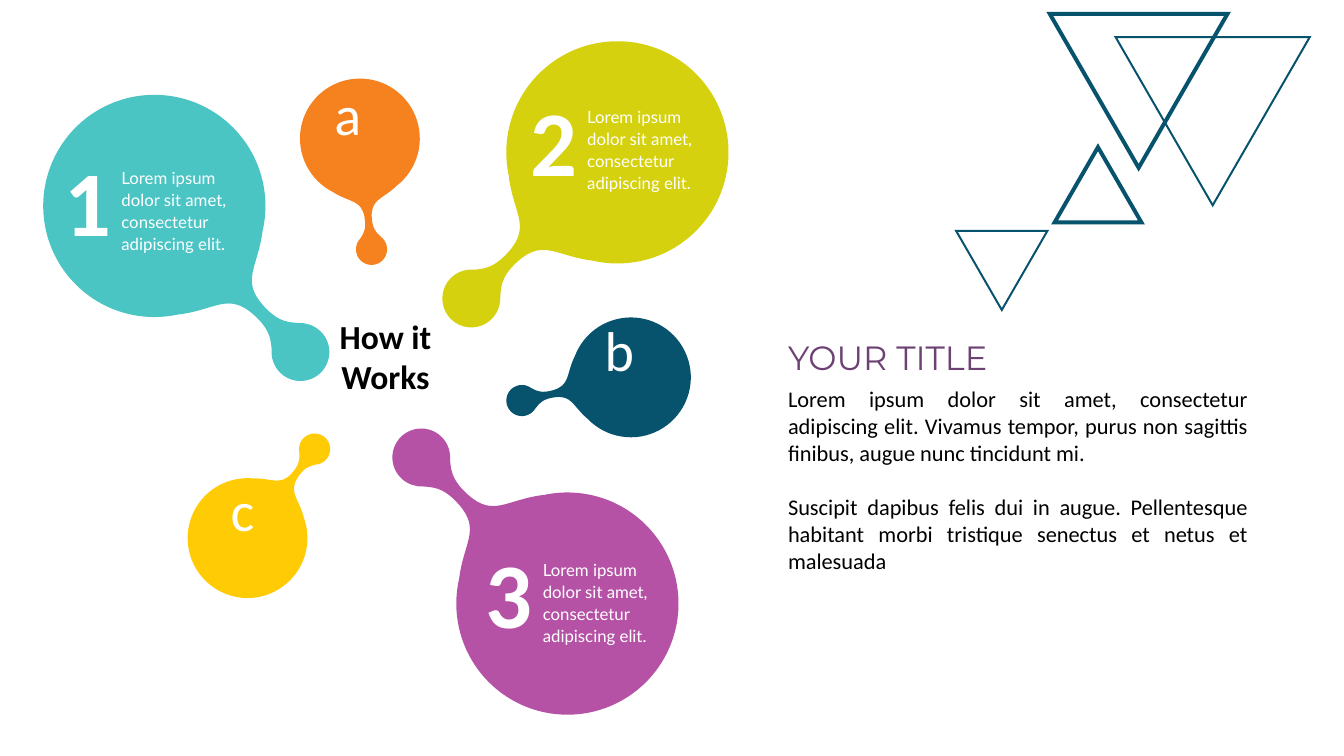
from math import cos, radians, sin, sqrt, tan

from lxml import etree
from pptx import Presentation
from pptx import util as u
from pptx.dml.color import RGBColor
from pptx.enum import shapes as sh, text as tx
from pptx.oxml.ns import qn

HUES = {"teal": "4BC4C4", "lime": "D5D10E", "plum": "B652A6", "orange": "F5821F",
        "navy": "07526D", "gold": "FFCB05", "title": "6D4174",
        "white": "FFFFFF", "black": "000000"}
LOREM = "Lorem ipsum dolor sit amet, consectetur adipiscing elit."
BODY = ["Lorem ipsum dolor sit amet, consectetur adipiscing elit. Vivamus tempor, "
        "purus non sagittis finibus, augue nunc tincidunt mi.",
        "Suscipit dapibus felis dui in augue. Pellentesque habitant morbi tristique "
        "senectus et netus et malesuada"]

# Drop outline for a bulb of radius 1 at the origin, tail along the x axis
BULB, TAIL, TIP, BEAD = 32, 140, 1.86, 0.26
SIDE = [(0.85, 0.53), (1.05, 0.27), (1.02, 0.08), (1.32, 0.06),
        (1.5, 0.05), (1.57, 0.09), (1.66, 0.17)]

# hue, centre x and y, radius, tail angle, label, label offset from centre
DROPS = [
    ("navy", 15.9, 9.51, 1.51, 168, "b", -0.91, -1.69),
    ("orange", 9.07, 3.49, 1.51, 84, "a", -0.89, -1.61),
    ("gold", 6.24, 13.56, 1.51, -53, "c", -0.68, -1.7),
    ("lime", 15.56, 3.84, 2.8, 135, "2", -2.45, -1.86),
    ("plum", 14.3, 15.21, 2.8, 225, "3", -2.31, -1.82),
    ("teal", 3.89, 5.19, 2.8, 45, "1", -2.52, -1.68),
]
# left, top, width, stroke, turn
PEAKS = [(24.05, 5.79, 2.39, 0.05, 180), (26.37, 0.3, 4.65, 0.1, 180),
         (26.49, 3.61, 2.36, 0.1, 0), (28.07, 0.91, 4.98, 0.05, 180)]


def rgb(hue):
    return RGBColor.from_string(HUES[hue])


def arc(mid, rad, start, end, parts):
    """Start point, then three Bezier points for each part of the arc."""
    step = radians(end - start) / parts
    pull = 4 / 3 * tan(step / 4)
    pts = [(mid + rad * cos(radians(start)), rad * sin(radians(start)))]
    for i in range(parts):
        a = radians(start) + i * step
        b = a + step
        for p, q in ((cos(a) - pull * sin(a), sin(a) + pull * cos(a)),
                     (cos(b) + pull * sin(b), sin(b) - pull * cos(b)),
                     (cos(b), sin(b))):
            pts.append((mid + rad * p, rad * q))
    return pts


def outline():
    return (arc(0, 1, BULB, 360 - BULB, 8) + [(x, -y) for x, y in SIDE[1:]]
            + arc(TIP, BEAD, -TAIL, TAIL, 6)[1:] + SIDE[-2::-1])


def bend(shape):
    """Turn each three line segments into one cubic curve."""
    lines = list(shape._element.iter(qn("a:lnTo")))
    for i in range(0, len(lines), 3):
        cubic = etree.Element(qn("a:cubicBezTo"))
        lines[i].addprevious(cubic)
        for line in lines[i:i + 3]:
            cubic.append(line[0])
            line.getparent().remove(line)


def words(slide, box, lines, size, hue, font="Calibri", bold=False, align=None,
          space=None, gap=0, inset=(0.25, 0.13), wrap=True):
    """Text box with one paragraph for each line."""
    frame = slide.shapes.add_textbox(*map(u.Cm, box)).text_frame
    frame.word_wrap = wrap
    frame.margin_left = frame.margin_right = u.Cm(inset[0])
    frame.margin_top = frame.margin_bottom = u.Cm(inset[1])
    for i, line in enumerate(lines):
        para = frame.paragraphs[0] if i == 0 else frame.add_paragraph()
        para.text = line
        para.alignment = align
        para.line_spacing = space
        para.space_before = u.Pt(gap if i else 0)
        para.font.size = u.Pt(size)
        para.font.name = font
        para.font.bold = bold
        para.font.color.rgb = rgb(hue)


def drop(slide, hue, x, y, rad, turn, label, dx, dy):
    c, s = cos(radians(turn)), sin(radians(turn))
    pts = [(u.Cm(x + rad * (p * c - q * s)), u.Cm(y + rad * (p * s + q * c)))
           for p, q in outline()]
    pen = slide.shapes.build_freeform(*pts[0], scale=1.0)
    pen.add_line_segments(pts[1:], close=False)
    blob = pen.convert_to_shape()
    bend(blob)
    blob.shadow.inherit = False
    blob.fill.solid()
    blob.fill.fore_color.rgb = rgb(hue)
    blob.line.fill.background()
    left, top = x + dx, y + dy
    if label.isdigit():
        words(slide, (left, top, 1.45, 3.07), [label], 66, "white", bold=True)
        words(slide, (left + 1.39, top + 0.51, 3.86, 2.54), [LOREM], 12, "white",
              "Lato", space=1.1, inset=(0.3, 0.15))
    else:
        words(slide, (left, top, 1.45, 1.96), [label], 40, "white")


def peak(slide, x, y, w, pen, turn):
    """Equilateral outline whose outer edge fills the given width."""
    high = w * sqrt(3) / 2 - 1.5 * pen
    top = y + (pen / 2 if turn else pen)
    box = (x + sqrt(3) * pen / 2, top, w - sqrt(3) * pen, high)
    tri = slide.shapes.add_shape(sh.MSO_SHAPE.ISOSCELES_TRIANGLE, *map(u.Cm, box))
    tri.rotation = turn
    tri.shadow.inherit = False
    tri.fill.background()
    tri.line.color.rgb = rgb("navy")
    tri.line.width = u.Cm(pen)
    edge = tri._element.spPr.find(qn("a:ln"))
    etree.SubElement(edge, qn("a:miter"), lim="800000")


def panel(slide, x, y, w):
    """Title with the justified text below it."""
    words(slide, (x, y, 5.59, 1.27), ["YOUR TITLE"], 24, "title", "Montserrat",
          wrap=False)
    words(slide, (x, y + 1.22, w, 5.05), BODY, 16, "black",
          align=tx.PP_ALIGN.JUSTIFY, gap=19.5)


def main():
    deck = Presentation()
    deck.slide_width, deck.slide_height = u.Cm(33.87), u.Cm(19.05)
    slide = deck.slides.add_slide(deck.slide_layouts[6])
    for item in DROPS:
        drop(slide, *item)
    words(slide, (8.05, 7.82, 3.33, 2.31), ["How it", "Works"], 24, "black",
          bold=True, align=tx.PP_ALIGN.CENTER)
    panel(slide, 19.61, 8.36, 12.09)
    for item in PEAKS:
        peak(slide, *item)
    deck.save("out.pptx")


if __name__ == "__main__":
    main()
